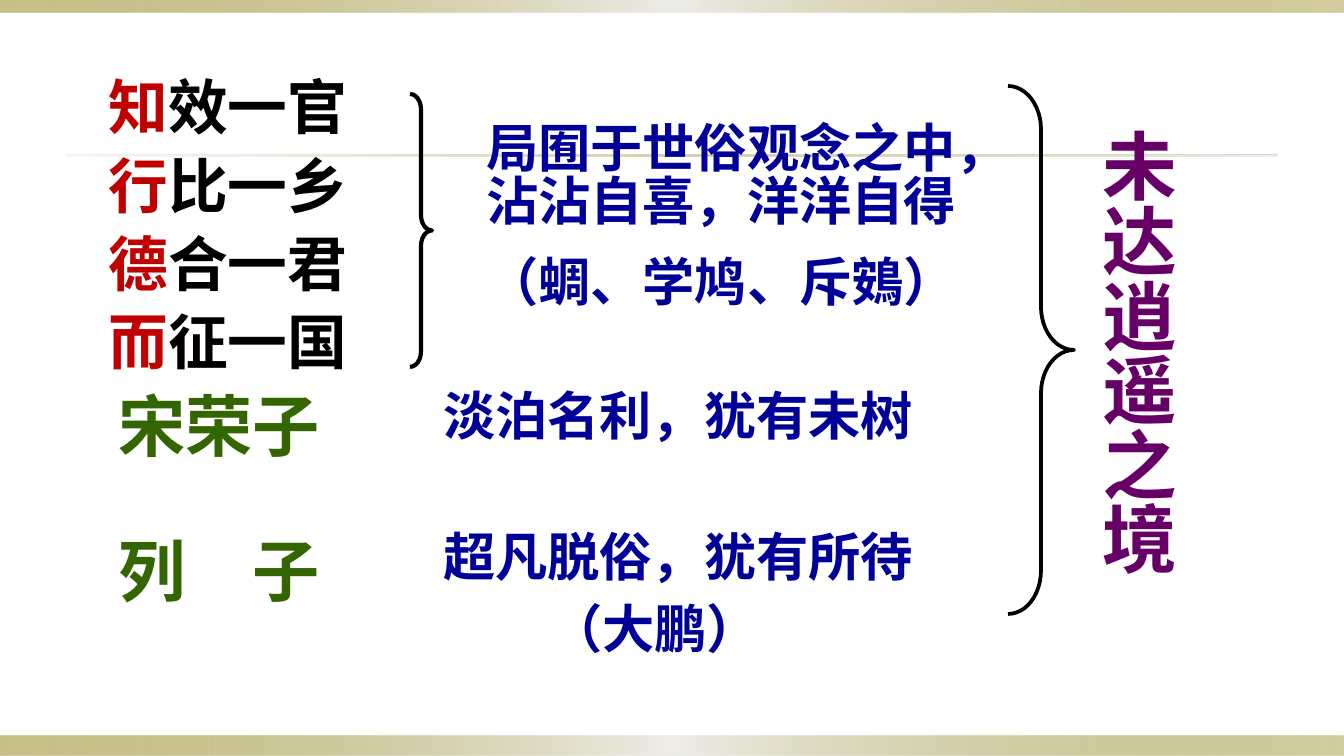
from dataclasses import dataclass
from typing import NamedTuple

from lxml import etree
from pptx import Presentation
from pptx import util as u
from pptx.dml.color import RGBColor
from pptx.enum import shapes, text
from pptx.oxml.ns import qn

SCALE = 914400 / 134.4


@dataclass(frozen=True)
class Theme:
    font: str = "Arial"
    black: str = "000000"
    red: str = "C00000"
    blue: str = "000099"
    green: str = "336600"
    plum: str = "660066"
    gold: str = "918415"
    pale: str = "EEEDE8"
    sand: str = "DCD9CC"
    note: int = 28
    verse: int = 32
    name: int = 36
    goal: int = 40
    gap: float = 0.53


THEME = Theme()


class Box(NamedTuple):
    left: int
    top: int
    width: int
    height: int


class Stop(NamedTuple):
    place: int
    color: str
    alpha: int


class Run(NamedTuple):
    words: str
    color: str


class Para(NamedTuple):
    runs: list[Run]
    space: float = 1.0
    indent: int = 0
    extra: int = 0


class Block(NamedTuple):
    box: Box
    size: int
    paras: list[Para]
    upright: bool = False


class Brace(NamedTuple):
    box: Box
    curve: float
    weight: float


def px(count: int) -> u.Emu:
    return u.Emu(round(count * SCALE))


def place(box: Box) -> list[u.Emu]:
    return [px(side) for side in box]


def draw_band(slide, box: Box, stops: list[Stop]) -> None:
    band = slide.shapes.add_shape(shapes.MSO_SHAPE.RECTANGLE, *place(box))
    band.shadow.inherit = False
    band.line.fill.background()
    band.fill.gradient()
    band.fill.gradient_angle = 0
    ramp = band._element.spPr.find(qn("a:gradFill")).find(qn("a:gsLst"))
    for old in list(ramp):
        ramp.remove(old)
    for stop in stops:
        mark = etree.SubElement(ramp, qn("a:gs"), pos=str(stop.place * 1000))
        tone = etree.SubElement(mark, qn("a:srgbClr"), val=stop.color)
        etree.SubElement(tone, qn("a:alpha"), val=str(stop.alpha * 1000))


def draw_brace(slide, brace: Brace) -> None:
    shape = slide.shapes.add_shape(
        shapes.MSO_SHAPE.RIGHT_BRACE, *place(brace.box))
    shape.shadow.inherit = False
    shape.adjustments[0] = brace.curve
    shape.adjustments[1] = 0.5
    shape.fill.background()
    shape.line.color.rgb = RGBColor.from_string(THEME.black)
    shape.line.width = u.Pt(brace.weight)


def draw_block(slide, block: Block) -> None:
    frame = slide.shapes.add_textbox(*place(block.box)).text_frame
    frame.word_wrap = True
    frame.auto_size = text.MSO_AUTO_SIZE.SHAPE_TO_FIT_TEXT
    if block.upright:
        frame._txBody.bodyPr.set("vert", "eaVert")
    for index, para in enumerate(block.paras):
        line = frame.add_paragraph() if index else frame.paragraphs[0]
        line.line_spacing = para.space
        line.space_before = u.Pt(round(block.size * THEME.gap) + para.extra)
        line.font.name = THEME.font
        line.font.size = u.Pt(block.size)
        line.font.bold = True
        if para.indent:
            line._p.get_or_add_pPr().set("marL", str(px(para.indent)))
        for part in para.runs:
            run = line.add_run()
            run.text = part.words
            run.font.color.rgb = RGBColor.from_string(part.color)
            etree.SubElement(
                run._r.get_or_add_rPr(), qn("a:ea"), typeface=THEME.font)


EDGE = [Stop(0, THEME.gold, 50), Stop(50, THEME.pale, 100),
        Stop(100, THEME.gold, 40)]
RULE = [Stop(0, THEME.sand, 20), Stop(50, THEME.gold, 40),
        Stop(100, THEME.sand, 50)]
BANDS = [
    (Box(0, 736, 1344, 20), EDGE),
    (Box(0, 0, 1344, 12), EDGE),
    (Box(67, 155, 1210, 2), RULE),
]
BRACES = [
    Brace(Box(410, 94, 22, 273), 0.695, 2.25),
    Brace(Box(1008, 86, 66, 528), 0.657, 2),
]
VERSES = ["知效一官", "行比一乡", "德合一君", "而征一国"]


def note(words: str, space: float, indent: int = 0, extra: int = 0) -> Para:
    return Para([Run(words, THEME.blue)], space, indent, extra)


BLOCKS = [
    Block(Box(42, 86, 1235, 310), THEME.verse, [
        Para([Run(verse[0], THEME.red), Run(verse[1:], THEME.black)], 0.65, 53)
        for verse in VERSES]),
    Block(Box(473, 118, 508, 207), THEME.note, [
        note("局囿于世俗观念之中，沾沾自喜，洋洋自得", 0.85),
        note("（蜩、学鸠、斥鴳）", 0.85)]),
    Block(Box(105, 378, 317, 246), THEME.name, [
        Para([Run("宋荣子", THEME.green)]),
        Para([Run("列　子", THEME.green)], 1.35)]),
    Block(Box(430, 394, 560, 286), THEME.note, [
        note("淡泊名利，犹有未树", 0.7),
        note("超凡脱俗，犹有所待", 0.7, extra=37),
        note("（大鹏）", 0.7, indent=107)]),
    Block(Box(1071, 116, 118, 515), THEME.goal, [
        Para([Run("未达逍遥之境", THEME.plum)])], upright=True),
]


def main() -> None:
    deck = Presentation()
    deck.slide_width, deck.slide_height = px(1344), px(756)
    slide = deck.slides.add_slide(deck.slide_layouts[6])
    for box, stops in BANDS:
        draw_band(slide, box, stops)
    for brace in BRACES:
        draw_brace(slide, brace)
    for block in BLOCKS:
        draw_block(slide, block)
    deck.save("out.pptx")


if __name__ == "__main__":
    main()
